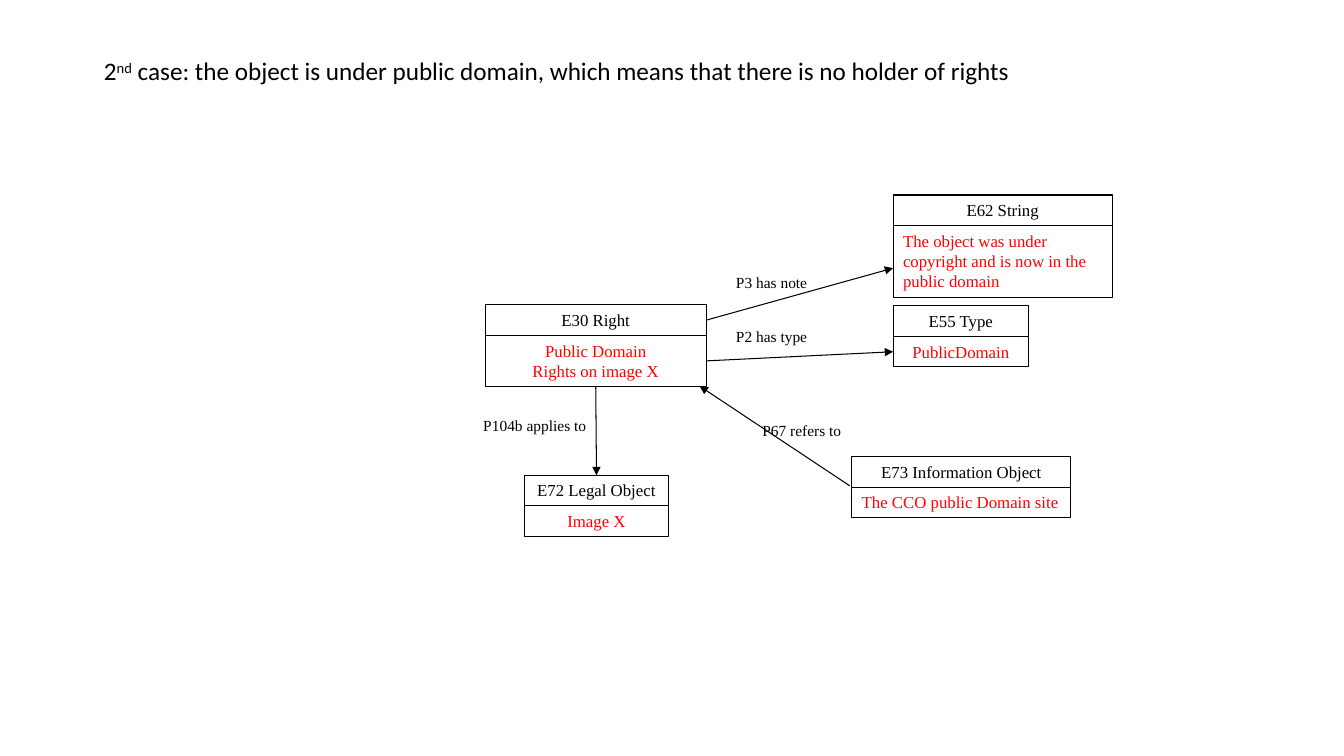
from dataclasses import dataclass

from lxml.etree import SubElement
from pptx import Presentation
from pptx.dml.color import RGBColor
from pptx.enum.shapes import MSO_CONNECTOR, MSO_SHAPE
from pptx.enum.text import MSO_ANCHOR, MSO_AUTO_SIZE, PP_ALIGN
from pptx.oxml.ns import qn
from pptx.util import Inches, Pt


@dataclass(frozen=True)
class Theme:
    ink: RGBColor = RGBColor(0, 0, 0)
    instance: RGBColor = RGBColor(0xFF, 0, 0)
    title_font: str = "Calibri"
    diagram_font: str = "Times New Roman"
    title_size: Pt = Pt(18)
    entity_size: Pt = Pt(12)
    label_size: Pt = Pt(11)
    line_width: Pt = Pt(0.75)


theme = Theme()
COLUMNS, ROWS = 133.33, 75
HEADING_ROWS = 3.03
LABEL_ROWS = 2.9
TOP, LEFT, BOTTOM, RIGHT = range(4)

deck = Presentation()
deck.slide_width, deck.slide_height = Inches(13.33), Inches(7.5)
page = deck.slides.add_slide(deck.slide_layouts[5])


def grid(*lengths):
    """Turn alternating column and row counts into slide lengths."""
    steps = (deck.slide_width / COLUMNS, deck.slide_height / ROWS)
    return [round(length * steps[index % 2]) for index, length in enumerate(lengths)]


def write(box, lines, size, color, align=PP_ALIGN.CENTER):
    frame = box.text_frame
    frame.text = "\n".join(lines)
    for para in frame.paragraphs:
        para.alignment = align
        para.font.name = theme.diagram_font
        para.font.size = size
        para.font.color.rgb = color


# Title
title = page.shapes.title
title.left, title.top, title.width, title.height = grid(9.3, 5, 93.2, 4)
frame = title.text_frame
frame.word_wrap = False
frame.auto_size = MSO_AUTO_SIZE.NONE
frame.vertical_anchor = MSO_ANCHOR.TOP
para = frame.paragraphs[0]
para.alignment = PP_ALIGN.LEFT
para.font.name = theme.title_font
para.font.size = theme.title_size
para.font.color.rgb = theme.ink
for text, baseline in (
    ("2", 0),
    ("nd", 30000),
    (" case: the object is under public domain, which means that there is no holder of rights", 0),
):
    span = para.add_run()
    span.text = text
    if baseline:
        span.font._element.set("baseline", str(baseline))

# Entities: class heading above its instance (left, top, width, instance rows)
entities = {
    "E30 Right": (48.15, 30.25, 21.9, 5.05, ["Public Domain", "Rights on image X"], PP_ALIGN.CENTER),
    "E62 String": (88.6, 19.35, 21.75, 7.1,
                   ["The object was under copyright and is now in the public domain"], PP_ALIGN.LEFT),
    "E55 Type": (88.6, 30.35, 13.45, 3.03, ["PublicDomain"], PP_ALIGN.CENTER),
    "E72 Legal Object": (52, 47.15, 14.35, 3.03, ["Image X"], PP_ALIGN.CENTER),
    "E73 Information Object": (84.5, 45.3, 21.75, 3.03, ["The CCO public Domain site"], PP_ALIGN.LEFT),
}
headings, instances = {}, {}
for name, (left, top, width, instance_rows, lines, align) in entities.items():
    for parts, part_top, rows, text, color, part_align in (
        (headings, top, HEADING_ROWS, [name], theme.ink, PP_ALIGN.CENTER),
        (instances, top + HEADING_ROWS, instance_rows, lines, theme.instance, align),
    ):
        box = page.shapes.add_shape(MSO_SHAPE.RECTANGLE, *grid(left, part_top, width, rows))
        box.shadow.inherit = False
        box.fill.background()
        box.line.color.rgb = theme.ink
        box.line.width = theme.line_width
        box.text_frame.vertical_anchor = MSO_ANCHOR.TOP
        write(box, text, theme.entity_size, color, part_align)
        parts[name] = box

# Properties: label place, start and end points, joined sides
right = instances["E30 Right"]
properties = (
    ("P3 has note", (71.8, 26.6, 9.5), (70, 31.8), (88.6, 26.6),
     (headings["E30 Right"], RIGHT), None),
    ("P2 has type", (71.8, 32, 9.5), (70, 35.8), (88.7, 34.8),
     (right, RIGHT), (instances["E55 Type"], LEFT)),
    ("P104b applies to", (46.9, 40.8, 12.3), (59.1, 38.3), (59.2, 47.2),
     (right, BOTTOM), (headings["E72 Legal Object"], TOP)),
    ("P67 refers to", (74.4, 41.3, 10.3), (84.3, 48.2), (69.4, 38.3), None, None),
)
for name, (left, top, width), start, end, start_side, end_side in properties:
    arrow = page.shapes.add_connector(MSO_CONNECTOR.STRAIGHT, *grid(*start, *end))
    if start_side:
        arrow.begin_connect(*start_side)
    if end_side:
        arrow.end_connect(*end_side)
    arrow.line.color.rgb = theme.ink
    arrow.line.width = theme.line_width
    SubElement(arrow.line._get_or_add_ln(), qn("a:tailEnd"), type="triangle")
    SubElement(arrow._element.spPr, qn("a:effectLst"))

    label = page.shapes.add_textbox(*grid(left, top, width, LABEL_ROWS))
    label.text_frame.word_wrap = False
    write(label, [name], theme.label_size, theme.ink)

deck.save("out.pptx")
